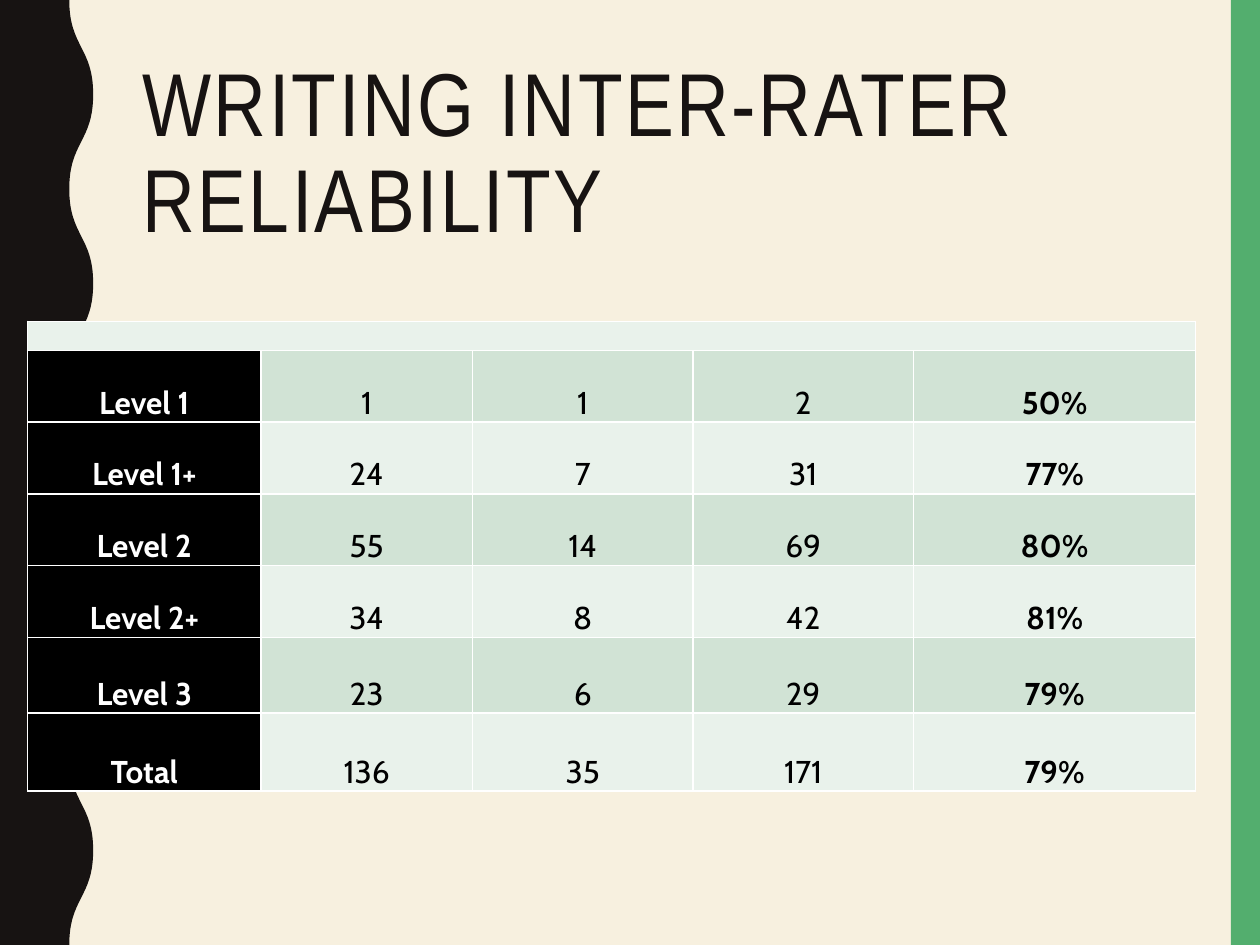
from lxml import etree
from pptx import Presentation
from pptx.dml.color import RGBColor
from pptx.enum.shapes import MSO_SHAPE as SHAPE
from pptx.enum.text import MSO_ANCHOR as ANCHOR, PP_ALIGN as ALIGN
from pptx.oxml.ns import qn
from pptx.util import Inches, Pt

CREAM = RGBColor(0xF7, 0xF0, 0xDF)
GREEN = RGBColor(0x53, 0xAE, 0x6E)
INK = RGBColor(0x17, 0x13, 0x12)
BLACK = RGBColor(0, 0, 0)
WHITE = RGBColor(255, 255, 255)
BAND_DARK = RGBColor(0xD1, 0xE3, 0xD5)
BAND_LIGHT = RGBColor(0xE9, 0xF2, 0xEB)


def fill_plain(shape, color):
    shape.fill.solid()
    shape.fill.fore_color.rgb = color
    shape.line.fill.background()
    shape.shadow.inherit = False


def style_cell(cell, color):
    """Fill the cell, set its margins and draw white borders of 1 pt."""
    layout = {"margin_left": Inches(0.01), "margin_right": Inches(0.01),
              "margin_top": Inches(0.01), "margin_bottom": 0,
              "vertical_anchor": ANCHOR.BOTTOM}
    for name, value in layout.items():
        setattr(cell, name, value)
    props = cell._tc.get_or_add_tcPr()
    for side in ("lnL", "lnR", "lnT", "lnB"):
        border = etree.SubElement(props, qn(f"a:{side}"), w=str(Pt(1)))
        solid = etree.SubElement(border, qn("a:solidFill"))
        etree.SubElement(solid, qn("a:srgbClr"), val=str(WHITE))
    cell.fill.solid()
    cell.fill.fore_color.rgb = color


prs = Presentation()
prs.slide_width, prs.slide_height = Inches(10), Inches(7.5)
slide = prs.slides.add_slide(prs.slide_layouts[6])
slide.background.fill.solid()
slide.background.fill.fore_color.rgb = CREAM

right_band = slide.shapes.add_shape(SHAPE.RECTANGLE, Inches(9.77), 0, Inches(0.23), Inches(7.5))
fill_plain(right_band, GREEN)

# Wavy left edge: ten S-curves, each 0.75 in tall, swinging between two x values
TROUGH, CREST, CURVE_HEIGHT = Inches(0.55), Inches(0.74), Inches(0.75)
turns = [(CREST if i % 2 else TROUGH, i * CURVE_HEIGHT) for i in range(11)]
builder = slide.shapes.build_freeform(*turns[0])
builder.add_line_segments([*turns[1:], (0, Inches(7.5)), (0, 0)], close=True)
wave = builder.convert_to_shape()
fill_plain(wave, INK)
segments = list(wave._element.iter(qn("a:lnTo")))
for segment, (x0, y0), (x1, y1) in zip(segments, turns, turns[1:]):
    middle = (y0 + y1) // 2
    curve = etree.Element(qn("a:cubicBezTo"))
    for x, y in ((x0, middle), (x1, middle), (x1, y1)):
        etree.SubElement(curve, qn("a:pt"), x=str(x), y=str(y))
    segment.getparent().replace(segment, curve)

ratings = [
    ("Level 1", "1", "1", "2", "50%"),
    ("Level 1+", "24", "7", "31", "77%"),
    ("Level 2", "55", "14", "69", "80%"),
    ("Level 2+", "34", "8", "42", "81%"),
    ("Level 3", "23", "6", "29", "79%"),
    ("Total", "136", "35", "171", "79%"),
]
column_widths = [1.85, 1.68, 1.75, 1.75, 2.24]
row_heights = [0.23, 0.57, 0.57, 0.57, 0.57, 0.6, 0.62]
table = slide.shapes.add_table(len(row_heights), len(column_widths), Inches(0.22), Inches(2.55),
                               Inches(9.27), Inches(3.73)).table
for column, width in zip(table.columns, column_widths):
    column.width = Inches(width)
for row, height in zip(table.rows, row_heights):
    row.height = Inches(height)

table.cell(0, 0).merge(table.cell(0, 4))
for cell in table.rows[0].cells:
    style_cell(cell, BAND_LIGHT)
    etree.SubElement(cell.text_frame.paragraphs[0]._p, qn("a:endParaRPr"), sz="800")

for r, rating in enumerate(ratings, 1):
    for c, value in enumerate(rating):
        cell = table.cell(r, c)
        band = BAND_DARK if r % 2 else BAND_LIGHT
        style_cell(cell, BLACK if c == 0 else band)
        paragraph = cell.text_frame.paragraphs[0]
        paragraph.alignment = ALIGN.CENTER
        run = paragraph.add_run()
        run.text = value
        for name, setting in {"name": "Cabin", "size": Pt(18), "bold": c in (0, 4)}.items():
            setattr(run.font, name, setting)
        run.font.color.rgb = WHITE if c == 0 else BLACK

title = slide.shapes.add_textbox(Inches(1.03), Inches(0.42), Inches(8.35), Inches(1.63)).text_frame
title.word_wrap = True
heading = title.paragraphs[0]
heading.line_spacing = 0.9
run = heading.add_run()
run.text = "WRITING INTER-RATER RELIABILITY"
run.font.name = "Arial Narrow"
run.font.size = Pt(51)
run.font.color.rgb = INK
run.font._element.set("spc", "150")

prs.save("out.pptx")
